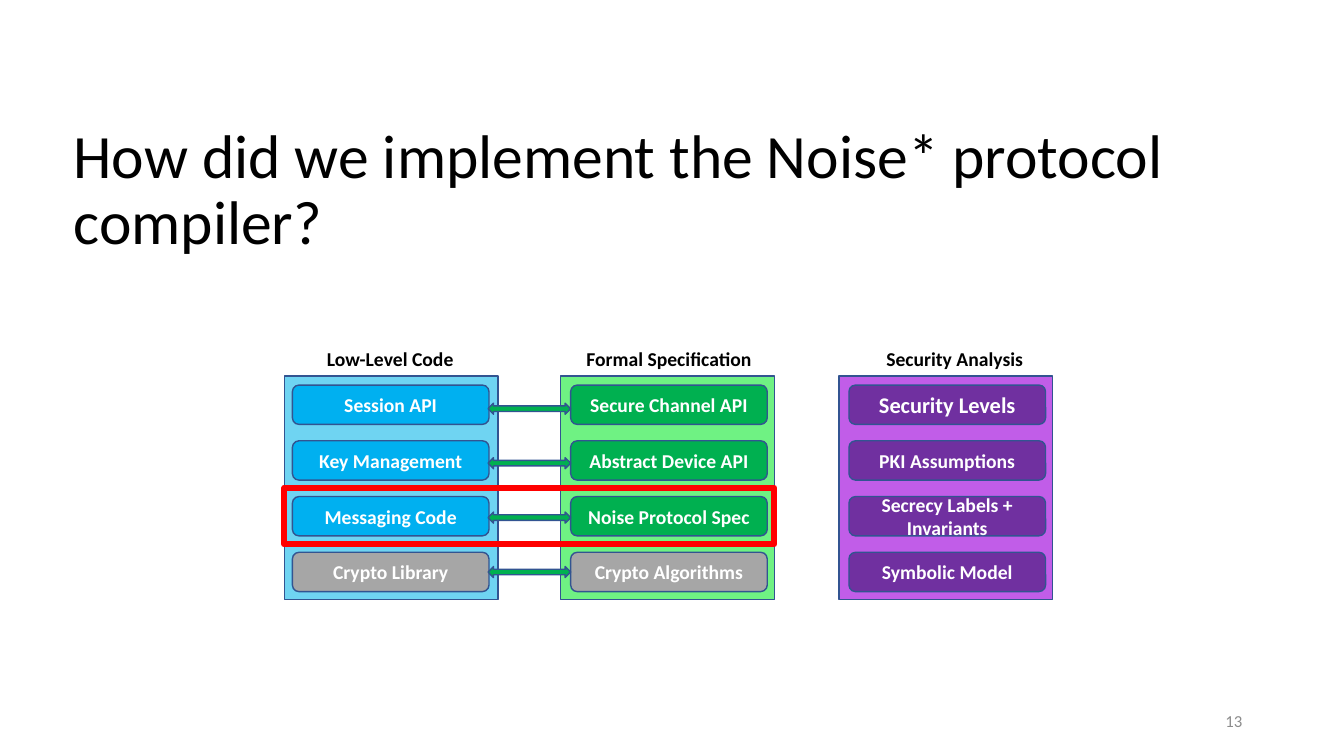
from pptx import Presentation
from pptx.dml.color import RGBColor
from pptx.enum.shapes import MSO_SHAPE
from pptx.enum.text import MSO_ANCHOR, PP_ALIGN
from pptx.util import Inches, Pt

RECT, ROUNDED = MSO_SHAPE.RECTANGLE, MSO_SHAPE.ROUNDED_RECTANGLE
ARROW = MSO_SHAPE.LEFT_RIGHT_ARROW
LEFT, CENTER, RIGHT = PP_ALIGN.LEFT, PP_ALIGN.CENTER, PP_ALIGN.RIGHT
TOP, MIDDLE = MSO_ANCHOR.TOP, MSO_ANCHOR.MIDDLE
COLORS = {
    "outline": "325491", "highlight": "FF0000", "white": "FFFFFF",
    "black": "000000", "number": "8C8C8C", "crypto": "A6A6A6",
    "code": "00B0F0", "code panel": "6FD4F2",
    "spec": "00B050", "spec panel": "6FF283",
    "security": "7030A0", "security panel": "C15DE8",
}

PANEL_TOP, PANEL_W, PANEL_H = 3.73, 2.12, 2.22
BOX_TOP, BOX_W, BOX_H, BOX_PITCH = 3.82, 1.95, 0.39, 0.553
ARROW_TOP, ARROW_H, ARROW_PITCH = 4.0, 0.11, 0.54
HEADING_TOP, HEADING_H = 3.39, 0.34

# panel left, box left, heading left, heading width, heading, colour, boxes
COLUMNS = [
    (8.32, 8.42, 8.65, 1.64, "Security Analysis", "security",
     ["Security Levels", "PKI Assumptions", "Secrecy Labels + Invariants", "Symbolic Model"]),
    (5.56, 5.66, 5.66, 1.95, "Formal Specification", "spec",
     ["Secure Channel API", "Abstract Device API", "Noise Protocol Spec", "Crypto Algorithms"]),
    (2.82, 2.9, 3.05, 1.64, "Low-Level Code", "code",
     ["Session API", "Key Management", "Messaging Code", "Crypto Library"]),
]


def write(sp, text, size=14, color="white", bold=True, align=CENTER, anchor=MIDDLE, spacing=1.0):
    tf = sp.text_frame
    tf.word_wrap = True
    tf.vertical_anchor = anchor
    p = tf.paragraphs[0]
    p.alignment = align
    p.line_spacing = spacing
    r = p.add_run()
    r.text = text
    r.font.name = "Calibri"
    r.font.size = Pt(size)
    r.font.bold = bold
    r.font.color.rgb = RGBColor.from_string(COLORS[color])


def add_block(kind, x, y, w, h, fill=None, line="outline", weight=1):
    sp = s.shapes.add_shape(kind, Inches(x), Inches(y), Inches(w), Inches(h))
    sp.shadow.inherit = False
    if fill:
        sp.fill.solid()
        sp.fill.fore_color.rgb = RGBColor.from_string(COLORS[fill])
    else:
        sp.fill.background()
    sp.line.color.rgb = RGBColor.from_string(COLORS[line])
    sp.line.width = Pt(weight)
    return sp


prs = Presentation()
prs.slide_width, prs.slide_height = Inches(13.33), Inches(7.5)
s = prs.slides.add_slide(prs.slide_layouts[5])

title = s.shapes.title
title.left, title.top, title.width, title.height = (Inches(v) for v in (0.63, 1.19, 12.07, 1.6))
write(title, "How did we implement the Noise* protocol compiler?", size=44,
      color="black", bold=False, align=LEFT, anchor=TOP, spacing=0.9)

for panel_x, box_x, heading_x, heading_w, heading, color, labels in COLUMNS:
    add_block(RECT, panel_x, PANEL_TOP, PANEL_W, PANEL_H, color + " panel")
    tb = s.shapes.add_textbox(Inches(heading_x), Inches(HEADING_TOP),
                              Inches(heading_w), Inches(HEADING_H))
    write(tb, heading, color="black", anchor=TOP)
    for row, label in enumerate(labels):
        fill = "crypto" if label.startswith("Crypto") else color
        box = add_block(ROUNDED, box_x, BOX_TOP + row * BOX_PITCH, BOX_W, BOX_H, fill)
        write(box, label, size=16 if label == "Security Levels" else 14)

for row in range(4):
    add_block(ARROW, 4.84, ARROW_TOP + row * ARROW_PITCH, 0.82, ARROW_H, "spec")

add_block(RECT, 2.82, 4.84, 4.86, 0.56, line="highlight", weight=4.5)

number = s.shapes.add_textbox(Inches(9.42), Inches(6.95), Inches(3), Inches(0.4))
write(number, "13", size=12, color="number", bold=False, align=RIGHT)

prs.save("out.pptx")
